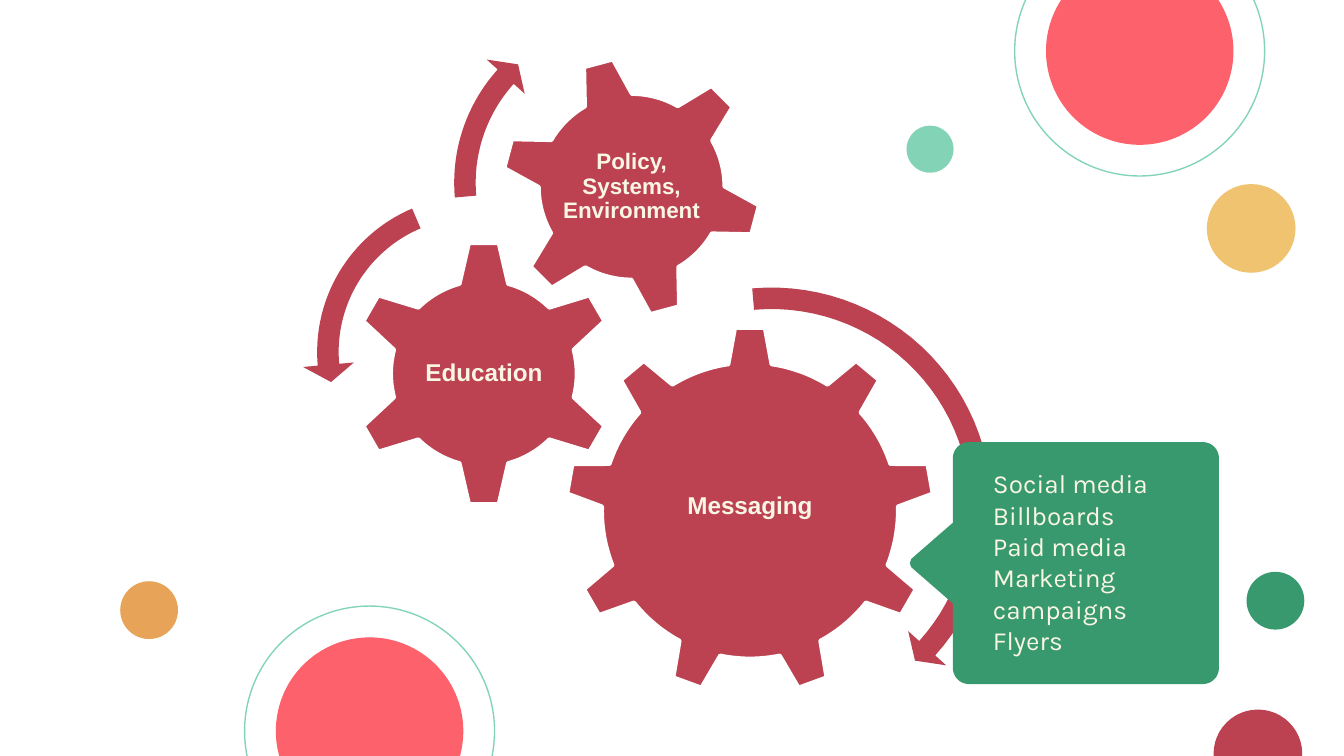
from math import asin, atan2, cos, degrees, hypot, radians, sin

from pptx import Presentation
from pptx.dml.color import RGBColor
from pptx.enum import shapes, text
from pptx.util import Inches, Pt

WHITE = RGBColor(0xFF, 0xFF, 0xFF)
CREAM = RGBColor(0xF9, 0xF6, 0xE3)
CORAL = RGBColor(0xFD, 0x61, 0x6B)
MINT = RGBColor(0x83, 0xD4, 0xB6)
YELLOW = RGBColor(0xEF, 0xC3, 0x70)
ORANGE = RGBColor(0xE7, 0xA3, 0x57)
GREEN = RGBColor(0x39, 0x99, 0x6E)
RED = RGBColor(0xBC, 0x42, 0x51)


def style(sp, fill=None, line=None, width=0.75):
    sp.shadow.inherit = False
    if fill is None:
        sp.fill.background()
    else:
        sp.fill.solid()
        sp.fill.fore_color.rgb = fill
    if line is None:
        sp.line.fill.background()
    else:
        sp.line.color.rgb = line
        sp.line.width = Pt(width)


def polar(cx, cy, r, angle):
    return cx + r * cos(radians(angle)), cy + r * sin(radians(angle))


def arc(cx, cy, r, start, end, steps=12):
    return [polar(cx, cy, r, start + (end - start) * i / steps)
            for i in range(steps + 1)]


def polygon(parent, points, **look):
    emu = [(Inches(x), Inches(y)) for x, y in points]
    builder = parent.build_freeform(*emu[0], scale=1.0)
    builder.add_line_segments(emu[1:], close=True)
    style(builder.convert_to_shape(), **look)


def circle(parent, cx, cy, d, **look):
    sp = parent.add_shape(shapes.MSO_SHAPE.OVAL, Inches(cx - d / 2),
                          Inches(cy - d / 2), Inches(d), Inches(d))
    style(sp, **look)


def text_box(parent, x, y, w, h, lines, size, font, inset):
    tf = parent.add_textbox(Inches(x), Inches(y), Inches(w), Inches(h)).text_frame
    tf.word_wrap = True
    tf.margin_left = tf.margin_right = Inches(inset)
    tf.margin_top = tf.margin_bottom = Inches(inset)
    tf.text = "\n".join(lines)
    for p in tf.paragraphs:
        p.font.size = Pt(size)
        p.font.name = font
        p.font.color.rgb = CREAM
    return tf


def ringed_disc(slide, left, top, size=1.86):
    group = slide.shapes.add_group_shape().shapes
    cx, cy = left + size / 2, top + size / 2
    circle(group, cx, cy, size, line=MINT)
    circle(group, cx, cy, size * 0.75, fill=CORAL)


def background_dots(slide):
    ringed_disc(slide, 7.55, -0.55)
    ringed_disc(slide, 1.82, 4.51)
    for cx, cy, d, color in [(6.92, 1.11, 0.35, MINT), (9.31, 1.7, 0.66, YELLOW),
                             (9.49, 4.47, 0.43, GREEN), (9.36, 5.61, 0.66, RED),
                             (1.11, 4.54, 0.43, ORANGE)]:
        circle(slide.shapes, cx, cy, d, fill=color)


def gear(parent, cx, cy, teeth, body, tip, root_half, tip_half, turn=0):
    """Cog with a round body; lengths are radii and half tooth widths."""
    root_angle = degrees(asin(root_half / body))
    tip_angle = degrees(atan2(tip_half, tip))
    tip_radius = hypot(tip, tip_half)
    pitch = 360 / teeth
    points = []
    for i in range(teeth):
        mid = turn - 90 + i * pitch
        points += [polar(cx, cy, tip_radius, mid - tip_angle),
                   polar(cx, cy, tip_radius, mid + tip_angle)]
        points += arc(cx, cy, body, mid + root_angle, mid + pitch - root_angle)
    polygon(parent, points, fill=RED, line=WHITE, width=2)


def gear_label(parent, cx, cy, w, h, words, size):
    tf = text_box(parent, cx - w / 2, cy - h / 2, w, h, [words], size, "Arial", 0.02)
    tf.vertical_anchor = text.MSO_ANCHOR.MIDDLE
    p = tf.paragraphs[0]
    p.alignment = text.PP_ALIGN.CENTER
    p.line_spacing = 0.9
    p.font.bold = True


def arc_arrow(parent, cx, cy, outer, start, end, band=0.16, flare=0.11, reach=0.13):
    inner = outer - band
    middle = outer - band / 2
    ahead = degrees(reach / middle) * (1 if end > start else -1)
    head = [polar(cx, cy, outer + flare, end), polar(cx, cy, middle, end + ahead),
            polar(cx, cy, inner - flare, end)]
    points = (arc(cx, cy, outer, start, end, 40) + head
              + arc(cx, cy, inner, end, start, 40))
    polygon(parent, points, fill=RED)


def gear_diagram(slide, left, top):
    group = slide.shapes.add_group_shape().shapes
    small = dict(teeth=6, body=0.69, root_half=0.18, tip_half=0.11)

    # Gears and their labels
    x, y = left + 3.33, top + 3.4
    gear(group, x, y, 9, 1.1, 1.36, 0.16, 0.11)
    gear_label(group, x, y - 0.03, 1.64, 1.4, "Messaging", 13)
    x, y = left + 1.35, top + 2.38
    gear(group, x, y, tip=0.97, **small)
    gear_label(group, x, y, 0.99, 0.98, "Education", 13)
    x, y = left + 2.45, top + 0.99
    gear(group, x, y, tip=0.95, turn=-15, **small)
    gear_label(group, x, y, 1.1, 1.09, "Policy, Systems, Environment", 12)

    # Turning arrows: centre, outer radius, start and end angle
    for dx, dy, outer, start, end in [(3.49, 3.38, 1.64, -95, 42),
                                      (1.27, 2.22, 1.16, -113, -185),
                                      (2.39, 0.96, 1.26, 175, 222)]:
        arc_arrow(group, left + dx, top + dy, outer, start, end)


def callout(slide, left, top, width, height, lines):
    radius, pointer, half = 0.12, 0.32, 0.3
    right, bottom, mid = left + width, top + height, top + height / 2
    points = []
    for cx, cy, start in [(left + radius, top + radius, 180),
                          (right - radius, top + radius, 270),
                          (right - radius, bottom - radius, 0),
                          (left + radius, bottom - radius, 90)]:
        points += arc(cx, cy, radius, start, start + 90)
    # Blunt pointer on the left side
    tip = left - pointer
    points += [(left, mid + half), (tip + 0.01, mid + 0.03), (tip, mid),
               (tip + 0.01, mid - 0.03), (left, mid - half)]
    polygon(slide.shapes, points, fill=GREEN)
    tf = text_box(slide.shapes, left + 0.2, top + 0.09, 1.57, 1.62,
                  lines, 14, "Karla", 0.1)
    tf.auto_size = text.MSO_AUTO_SIZE.SHAPE_TO_FIT_TEXT


def main():
    prs = Presentation()
    prs.slide_width = Inches(10)
    prs.slide_height = prs.slide_width * 9 // 16
    slide = prs.slides.add_slide(prs.slide_layouts[6])
    background_dots(slide)
    gear_diagram(slide, 2.25, 0.4)
    callout(slide, 7.09, 3.29, 1.98, 1.8,
            ["Social media", "Billboards", "Paid media",
             "Marketing campaigns", "Flyers"])
    prs.save("out.pptx")


if __name__ == "__main__":
    main()
